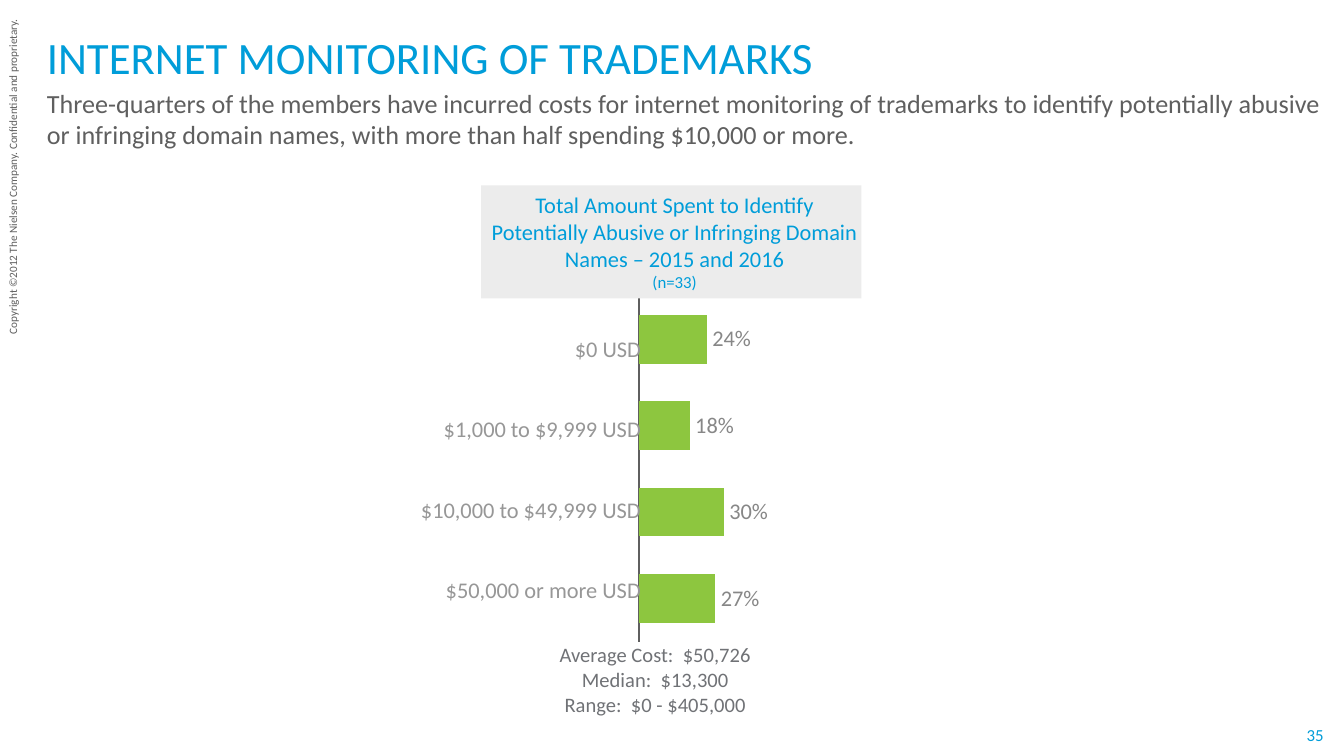
"""Build the slide on the cost of internet monitoring of trademarks."""
from pptx import Presentation
from pptx.chart.data import CategoryChartData
from pptx.dml.color import RGBColor
from pptx.enum.chart import XL_CHART_TYPE, XL_LABEL_POSITION, XL_TICK_LABEL_POSITION, XL_TICK_MARK
from pptx.enum.shapes import MSO_SHAPE
from pptx.enum.text import MSO_ANCHOR, PP_ALIGN
from pptx.oxml.ns import qn
from pptx.util import Inches, Pt

COLORS = {
    "blue": "009DD9",
    "dark": "5F5F5F",
    "summary": "707276",
    "category": "979797",
    "value": "878787",
    "panel": "ECECEC",
    "bar": "8DC63F",
}
NO_STYLE = "{2D5ABB26-0587-4C30-8999-92F81FD0307C}"


def set_font(font, size, color):
    font.name = "Calibri"
    font.size = Pt(size)
    font.color.rgb = RGBColor.from_string(COLORS[color])


def write(shape, text, size, color, align=PP_ALIGN.LEFT, anchor=MSO_ANCHOR.TOP,
          side=0.1, edge=0, wrap=True):
    frame = shape.text_frame
    frame.word_wrap = wrap
    frame.vertical_anchor = anchor
    frame.margin_left = frame.margin_right = Inches(side)
    frame.margin_top = frame.margin_bottom = Inches(edge)
    frame.text = text
    for para in frame.paragraphs:
        para.alignment = align
        for span in para.runs:
            set_font(span.font, size, color)


deck = Presentation()
deck.slide_width, deck.slide_height = Inches(10), Inches(10 * 9 / 16)
page = deck.slides.add_slide(deck.slide_layouts[6])
shapes = page.shapes

copyright_box = shapes.add_textbox(Inches(-1.2), Inches(1.19), Inches(2.59), Inches(0.2))
copyright_box.rotation = 270
write(copyright_box, "Copyright ©2012 The Nielsen Company. Confidential and proprietary.",
      6, "dark", edge=0.05, wrap=False)

number_box = shapes.add_textbox(Inches(9.71), Inches(5.39), Inches(0.15), Inches(0.15))
write(number_box, "35", 9, "blue", PP_ALIGN.CENTER, MSO_ANCHOR.MIDDLE, side=0, wrap=False)

title_box = shapes.add_textbox(Inches(0.25), Inches(0.15), Inches(8.93), Inches(0.47))
write(title_box, "INTERNET MONITORING OF TRADEMARKS", 24, "blue", anchor=MSO_ANCHOR.BOTTOM)

subtitle_box = shapes.add_textbox(Inches(0.25), Inches(0.65), Inches(9.75), Inches(0.45))
write(subtitle_box,
      "Three-quarters of the members have incurred costs for internet monitoring of trademarks "
      "to identify potentially abusive or infringing domain names, with more than half spending "
      "$10,000 or more.", 14, "dark")

chart_data = CategoryChartData(number_format="0%")
chart_data.categories = ["1", "2", "3", "4"]
chart_data.add_series("Series 1", [0.27, 0.3, 0.18, 0.24])
chart = shapes.add_chart(XL_CHART_TYPE.BAR_CLUSTERED, Inches(4.71), Inches(2.15),
                         Inches(2.2), Inches(2.68), chart_data).chart
set_font(chart.font, 10, "dark")
chart.has_legend = False
chart.has_title = False

category_axis = chart.category_axis
category_axis.tick_label_position = XL_TICK_LABEL_POSITION.NONE
category_axis.major_tick_mark = XL_TICK_MARK.NONE
category_axis.minor_tick_mark = XL_TICK_MARK.NONE
category_axis.has_major_gridlines = False
set_font(category_axis.tick_labels.font, 12, "category")
category_axis.format.line.width = Pt(0.75)
category_axis.format.line.color.rgb = RGBColor.from_string(COLORS["dark"])

value_axis = chart.value_axis
value_axis.minimum_scale = 0
value_axis.maximum_scale = 1
value_axis.has_major_gridlines = False
value_axis.visible = False

plot = chart.plots[0]
plot.gap_width = 78
plot.overlap = 65
plot.vary_by_categories = False
bars = plot.series[0]
bars.format.fill.solid()
bars.format.fill.fore_color.rgb = RGBColor.from_string(COLORS["bar"])
labels = bars.data_labels
labels.show_value = True
labels.number_format = "0%"
labels.number_format_is_linked = False
labels.position = XL_LABEL_POSITION.OUTSIDE_END
set_font(labels.font, 12, "value")

summary_box = shapes.add_textbox(Inches(3.5), Inches(4.73), Inches(2.75), Inches(0.66))
write(summary_box, "Average Cost:  $50,726\nMedian:  $13,300\nRange:  $0 - $405,000",
      11, "summary", PP_ALIGN.CENTER, edge=0.05)

heading_panel = shapes.add_shape(MSO_SHAPE.RECTANGLE, Inches(3.58), Inches(1.38),
                                 Inches(2.83), Inches(0.84))
heading_panel.shadow.inherit = False
heading_panel.fill.solid()
heading_panel.fill.fore_color.rgb = RGBColor.from_string(COLORS["panel"])
heading_panel.line.fill.background()
write(heading_panel,
      "Total Amount Spent to Identify Potentially Abusive or Infringing Domain Names "
      "– 2015 and 2016\n(n=33)", 12, "blue", PP_ALIGN.CENTER, MSO_ANCHOR.MIDDLE, side=0)
for para in heading_panel.text_frame.paragraphs:
    para._p.get_or_add_pPr().set("marL", str(Inches(0.05)))
heading_panel.text_frame.paragraphs[1].runs[0].font.size = Pt(9)

ranges = ["$0 USD", "$1,000 to $9,999 USD", "$10,000 to $49,999 USD", "$50,000 or more USD"]
table = shapes.add_table(len(ranges), 1, Inches(2.33), Inches(2.3),
                         Inches(2.54), Inches(2.4)).table
table.first_row = False
table.horz_banding = False
table._tbl.tblPr.find(qn("a:tableStyleId")).text = NO_STYLE
for row, label in enumerate(ranges):
    cell = table.cell(row, 0)
    cell.fill.background()
    cell.vertical_anchor = MSO_ANCHOR.MIDDLE
    para = cell.text_frame.paragraphs[0]
    para.text = label
    para.alignment = PP_ALIGN.RIGHT
    set_font(para.runs[0].font, 12, "category")

deck.save("out.pptx")
